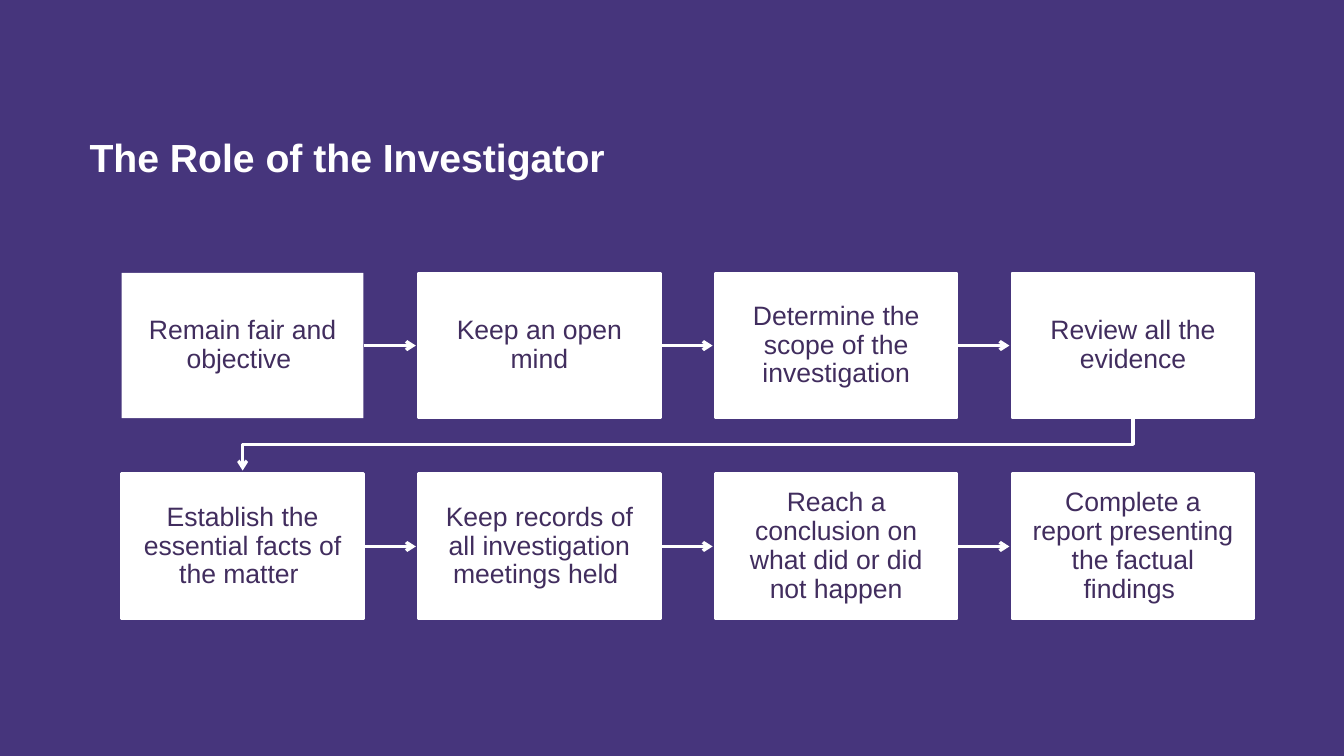
from dataclasses import dataclass

from lxml.etree import SubElement
from pptx import Presentation
from pptx.dml.color import RGBColor
from pptx.enum.shapes import MSO_CONNECTOR, MSO_SHAPE
from pptx.enum.text import MSO_ANCHOR, MSO_AUTO_SIZE, PP_ALIGN
from pptx.oxml.ns import qn
from pptx.slide import Slide
from pptx.text.text import TextFrame
from pptx.util import Pt

PURPLE = RGBColor(0x46, 0x35, 0x7C)
INK = RGBColor(0x41, 0x2D, 0x5E)
WHITE = RGBColor(0xFF, 0xFF, 0xFF)
FONT = "Arial"

LEFT, TOP = 87, 195
WIDTH, HEIGHT = 172.8, 103.7
STEP_X, STEP_Y = 212.1, 143.5
REACH = 37.4
COLS = 4


@dataclass(frozen=True)
class Step:
    text: str
    col: int
    row: int
    edge: bool = True

    @property
    def left(self) -> float:
        return LEFT + self.col * STEP_X

    @property
    def top(self) -> float:
        return TOP + self.row * STEP_Y

    @property
    def right(self) -> float:
        return self.left + WIDTH

    @property
    def base(self) -> float:
        return self.top + HEIGHT

    @property
    def mid_x(self) -> float:
        return self.left + WIDTH / 2

    @property
    def mid_y(self) -> float:
        return self.top + HEIGHT / 2


TEXTS = (
    "Remain fair and objective ",
    "Keep an open mind",
    "Determine the scope of the investigation",
    "Review all the evidence",
    "Establish the essential facts of the matter ",
    "Keep records of all investigation meetings held ",
    "Reach a conclusion on what did or did not happen",
    "Complete a report presenting the factual findings ",
)
STEPS = [Step(text, i % COLS, i // COLS, i > 0) for i, text in enumerate(TEXTS)]


def set_text(frame: TextFrame, text: str, size: float, color: RGBColor,
             align: PP_ALIGN, anchor: MSO_ANCHOR, inset: float) -> None:
    frame.word_wrap = True
    frame.auto_size = MSO_AUTO_SIZE.NONE
    frame.vertical_anchor = anchor
    frame.margin_left = frame.margin_right = Pt(inset)
    frame.margin_top = frame.margin_bottom = Pt(inset)
    frame.text = text
    para = frame.paragraphs[0]
    para.alignment = align
    para.font.name = FONT
    para.font.size = Pt(size)
    para.font.color.rgb = color


def add_title(slide: Slide, text: str) -> None:
    title = slide.shapes.title
    title.left, title.top = Pt(64), Pt(60.5)
    title.width, title.height = Pt(831.6), Pt(68.4)
    set_text(title.text_frame, text, 28, WHITE, PP_ALIGN.LEFT, MSO_ANCHOR.BOTTOM, 0)
    title.text_frame.paragraphs[0].font.bold = True


def add_box(slide: Slide, step: Step) -> None:
    box = slide.shapes.add_shape(
        MSO_SHAPE.RECTANGLE, Pt(step.left), Pt(step.top), Pt(WIDTH), Pt(HEIGHT))
    box.shadow.inherit = False
    box.fill.solid()
    box.fill.fore_color.rgb = WHITE
    if step.edge:
        box.line.color.rgb = WHITE
        box.line.width = Pt(2)
    else:
        box.line.fill.background()
    set_text(box.text_frame, step.text, 19, INK, PP_ALIGN.CENTER, MSO_ANCHOR.MIDDLE, 10.8)
    box.text_frame.paragraphs[0].line_spacing = 0.9


def add_arrow(slide: Slide, points: list[tuple[float, float]]) -> None:
    spots = [(Pt(x), Pt(y)) for x, y in points]
    if len(spots) == 2:
        arrow = slide.shapes.add_connector(MSO_CONNECTOR.STRAIGHT, *spots[0], *spots[1])
    else:
        pen = slide.shapes.build_freeform(*spots[0])
        pen.add_line_segments(spots[1:], close=False)
        arrow = pen.convert_to_shape()
        arrow.fill.background()
    arrow.line.color.rgb = WHITE
    arrow.line.width = Pt(2.25)
    props = arrow.element.spPr
    SubElement(props.find(qn("a:ln")), qn("a:tailEnd"), type="arrow")
    SubElement(props, qn("a:effectLst"))


def route(start: Step, end: Step) -> list[tuple[float, float]]:
    if start.row == end.row:
        return [(start.right, start.mid_y), (start.right + REACH, start.mid_y)]
    turn = start.base + REACH / 2
    return [(start.mid_x, start.base), (start.mid_x, turn),
            (end.mid_x, turn), (end.mid_x, start.base + REACH)]


def main() -> None:
    deck = Presentation()
    deck.slide_width, deck.slide_height = Pt(960.5), Pt(540)
    slide = deck.slides.add_slide(deck.slide_layouts[5])
    slide.background.fill.solid()
    slide.background.fill.fore_color.rgb = PURPLE
    add_title(slide, "The Role of the Investigator")
    for start, end in zip(STEPS, STEPS[1:]):
        add_arrow(slide, route(start, end))
    for step in STEPS:
        add_box(slide, step)
    deck.save("out.pptx")


if __name__ == "__main__":
    main()
